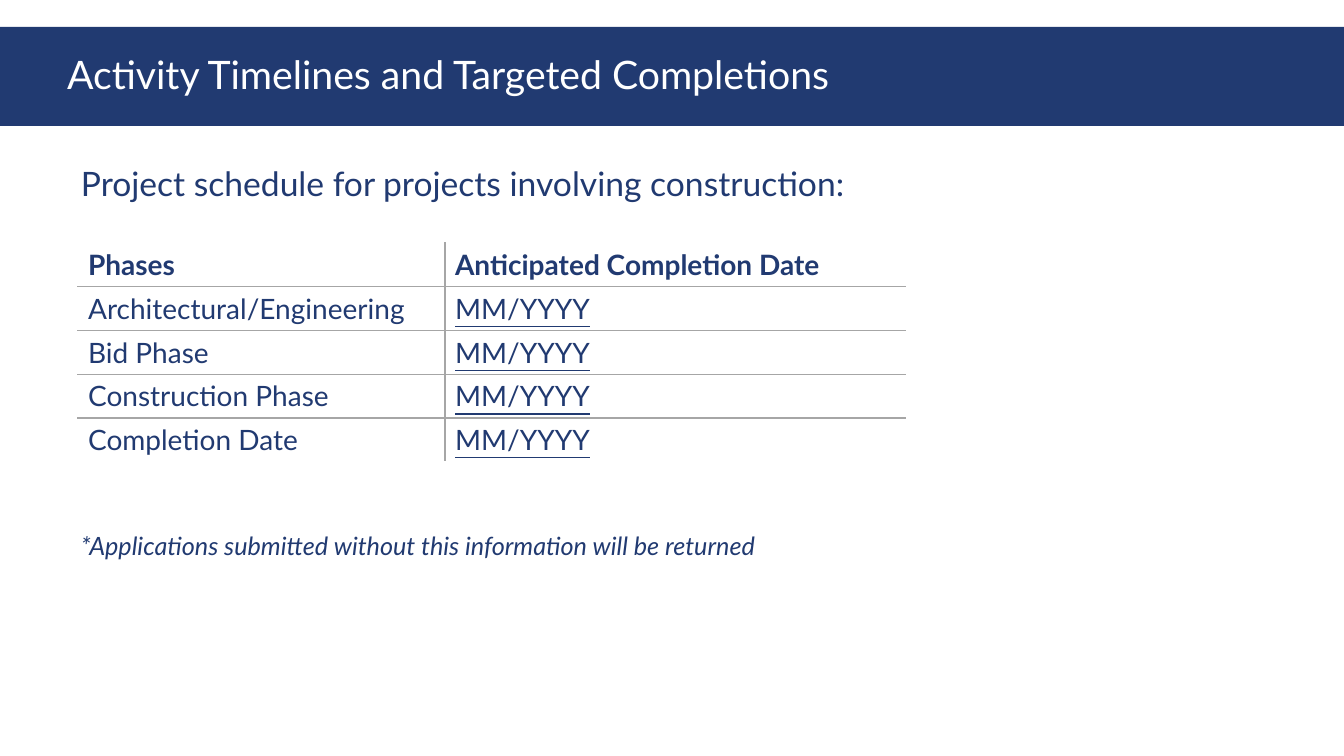
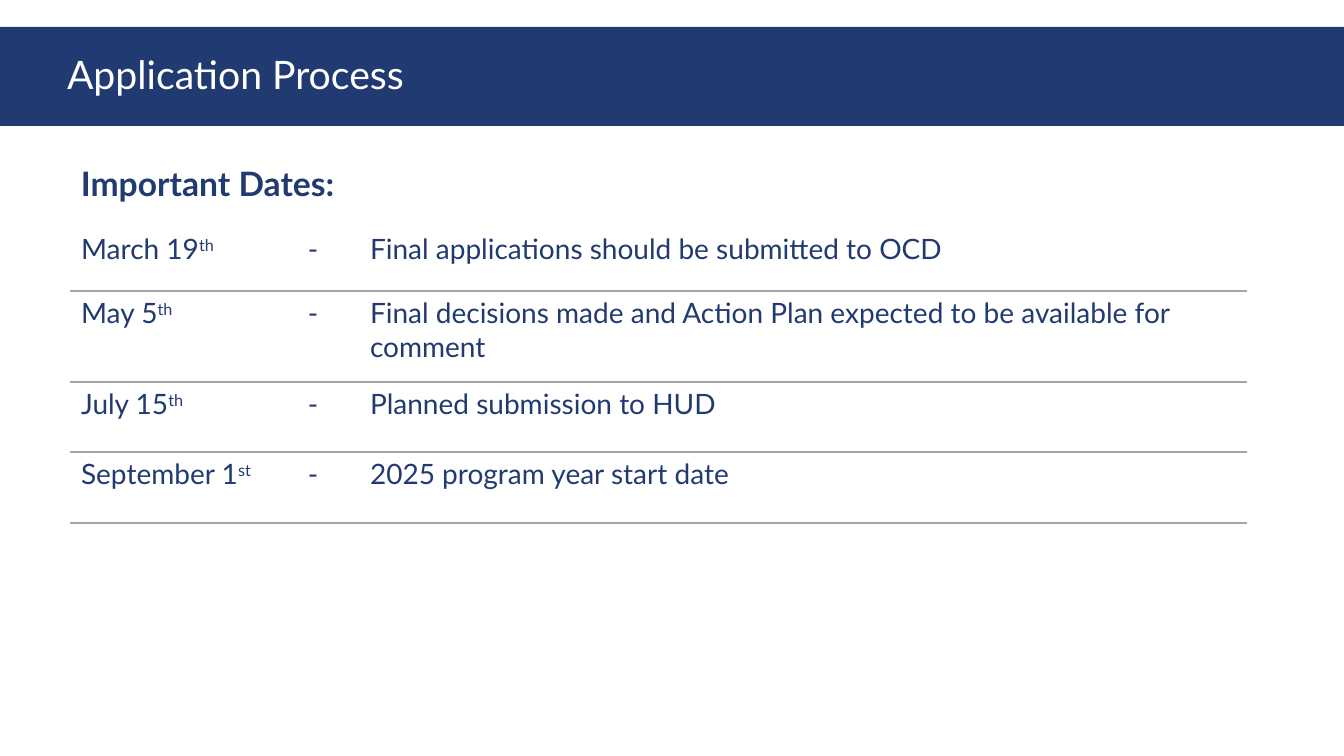
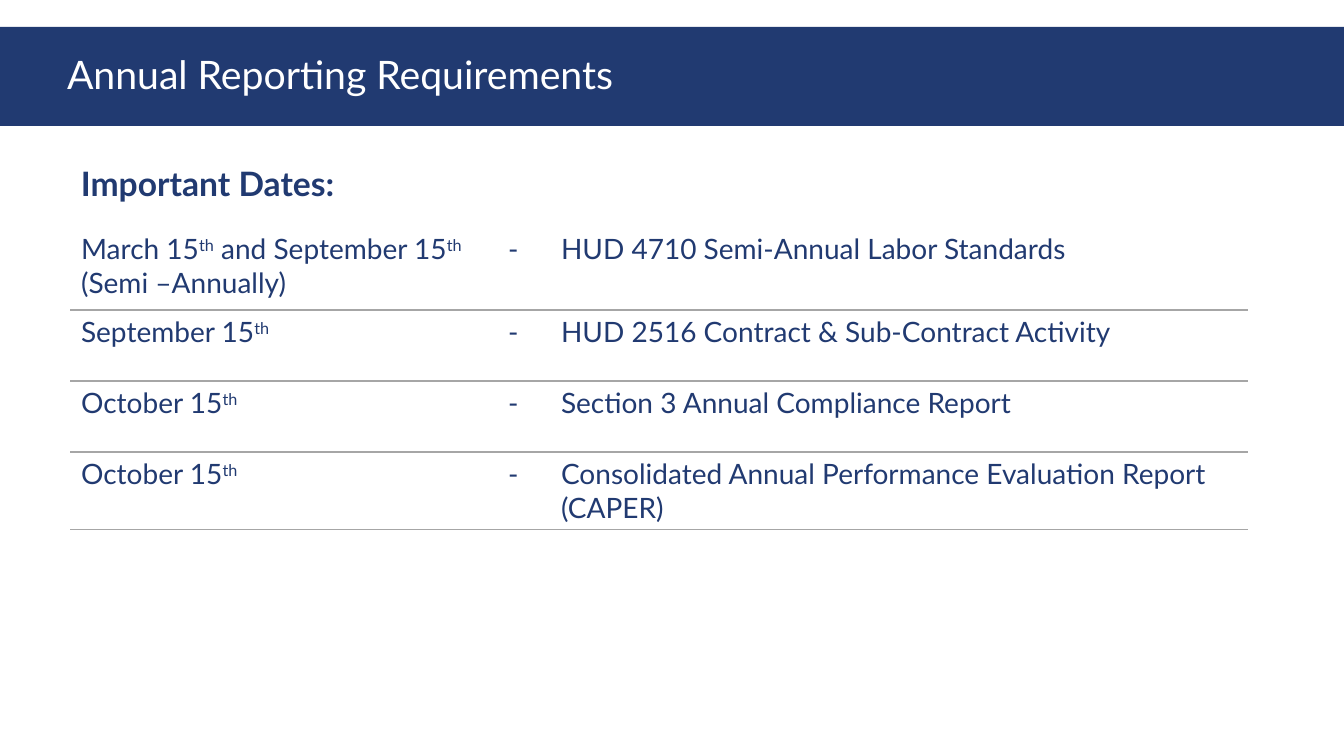
from pptx import Presentation
from pptx.dml.color import RGBColor
from pptx.enum import text
from pptx.oxml import parse_xml
from pptx.oxml.ns import nsdecls
from pptx.util import Emu, Pt

NAVY = RGBColor(0x21, 0x3A, 0x71)
WHITE = RGBColor(0xFF, 0xFF, 0xFF)
GREY = RGBColor(0xA6, 0xA6, 0xA6)
FONT = "Lato"
WIDTH, HEIGHT = 1344, 756
LEFT = 71
DATES_TOP = 227


def px(n):
    return Emu(round(n * 914400 / 100.8))


def write(p, marked, size, color=NAVY, bold=False, italic=False, underline=False):
    """Fill a paragraph; text between carets is superscript."""
    for i, part in enumerate(marked.split("^")):
        if not part:
            continue
        r = p.add_run()
        r.text = part
        f = r.font
        f.name, f.size, f.color.rgb = FONT, Pt(size), color
        f.bold, f.italic, f.underline = bold, italic, underline
        if i % 2:
            r._r.get_or_add_rPr().set("baseline", "30000")


# Shared slide parts
def add_slide(prs, title):
    s = prs.slides.add_slide(prs.slide_layouts[5])
    sp = s.shapes.title
    sp.left, sp.top, sp.width, sp.height = px(0), px(27), px(WIDTH), px(99)
    sp.fill.solid()
    sp.fill.fore_color.rgb = NAVY
    tf = sp.text_frame
    tf.vertical_anchor = text.MSO_ANCHOR.MIDDLE
    p = tf.paragraphs[0]
    p.alignment = text.PP_ALIGN.LEFT
    p.line_spacing = 0.9
    pPr = p._p.get_or_add_pPr()
    pPr.set("marL", str(px(63)))
    pPr.set("indent", str(px(-6)))
    write(p, title, 28, WHITE)
    return s


def add_line(s, top, height, line, size, **style):
    tf = s.shapes.add_textbox(px(LEFT), px(top), px(1159), px(height)).text_frame
    tf.word_wrap = True
    p = tf.paragraphs[0]
    p.line_spacing = 1.5
    write(p, line, size, **style)


def add_heading(s, line, **style):
    add_line(s, 138, 70, line, 24, **style)


# Tables
def set_borders(cell, sides):
    """Draw grey lines on the given sides, listed in the order L, R, T, B."""
    tcPr = cell._tc.get_or_add_tcPr()
    for i, side in enumerate(sides):
        tcPr.insert(i, parse_xml(
            f'<a:ln{side} {nsdecls("a")} w="12700"><a:solidFill>'
            f'<a:srgbClr val="{GREY}"/></a:solidFill></a:ln{side}>'))


def add_table(s, left, top, cols, rows):
    table = s.shapes.add_table(len(rows), len(cols), px(left), px(top),
                               px(sum(cols)), px(sum(rows))).table
    table.first_row = table.horz_banding = False
    for col, w in zip(table.columns, cols):
        col.width = px(w)
    for row, h in zip(table.rows, rows):
        row.height = px(h)
    for cell in table.iter_cells():
        cell.fill.background()
    return table


def add_phases(s, phases):
    table = add_table(s, 78, 243, [367, 460], [43] * (len(phases) + 1))
    rows = [("Phases", "Anticipated Completion Date")]
    rows += [(phase, "MM/YYYY") for phase in phases]
    for i, row in enumerate(rows):
        for j, value in enumerate(row):
            cell = table.cell(i, j)
            write(cell.text_frame.paragraphs[0], value, 20,
                  bold=i == 0, underline=i > 0 and j == 1)
            sides = "L" if j else "R"
            sides += "T" if i else ""
            sides += "B" if i < len(phases) else ""
            set_borders(cell, sides)


def add_dates(s, cols, rows, dates):
    table = add_table(s, LEFT, DATES_TOP, cols, rows)
    for i, (date, event) in enumerate(dates):
        for j, value in enumerate((date, "-", event)):
            cell = table.cell(i, j)
            p = cell.text_frame.paragraphs[0]
            write(p, value, 20)
            if j == 1:
                p.alignment = text.PP_ALIGN.CENTER
            set_borders(cell, "TB" if i else "B")


def dates_slide(prs, title, cols, rows, dates):
    s = add_slide(prs, title)
    add_heading(s, "Important Dates:", bold=True)
    add_dates(s, cols, rows, dates)


def main():
    prs = Presentation()
    prs.slide_width, prs.slide_height = px(WIDTH), px(HEIGHT)

    # Construction schedule
    s = add_slide(prs, "Activity Timelines and Targeted Completions")
    add_heading(s, "Project schedule for projects involving construction:")
    add_phases(s, ["Architectural/Engineering", "Bid Phase",
                   "Construction Phase", "Completion Date"])
    add_line(s, 510, 55, "*Applications submitted without this information will be returned",
             18, italic=True)

    # Application dates
    dates_slide(prs, "Application Process", [195, 94, 887], [64, 91, 70, 71], [
        ("March 19^th^", "Final applications should be submitted to OCD"),
        ("May 5^th^", "Final decisions made and Action Plan expected to be "
                      "available for comment"),
        ("July 15^th^", "Planned submission to HUD"),
        ("September 1^st^", "2025 program year start date"),
    ])

    # Reporting dates
    dates_slide(prs, "Annual Reporting Requirements", [405, 75, 696], [83, 71, 71, 77], [
        ("March 15^th^ and September 15^th^ (Semi –Annually)",
         "HUD 4710 Semi-Annual Labor Standards"),
        ("September 15^th^", "HUD 2516 Contract & Sub-Contract Activity"),
        ("October 15^th^", "Section 3 Annual Compliance Report"),
        ("October 15^th^", "Consolidated Annual Performance Evaluation Report (CAPER)"),
    ])

    prs.save("out.pptx")


if __name__ == "__main__":
    main()
